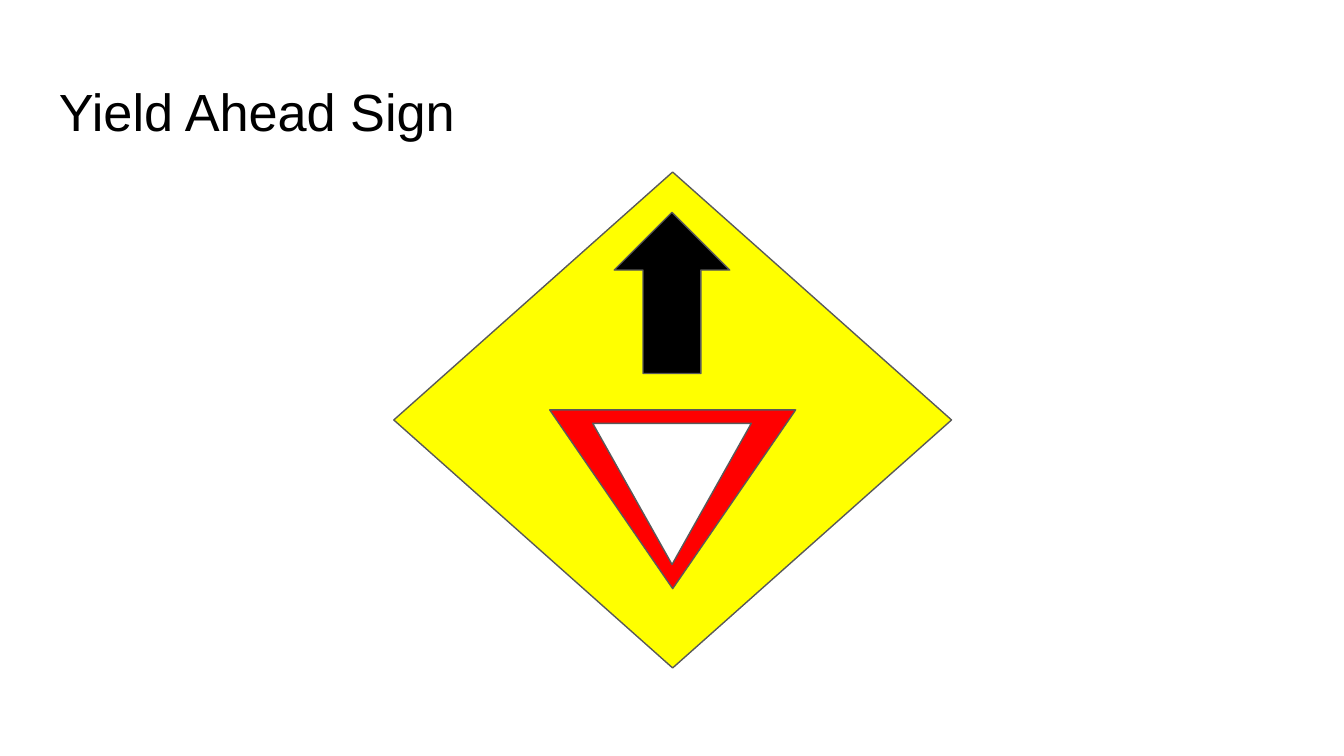
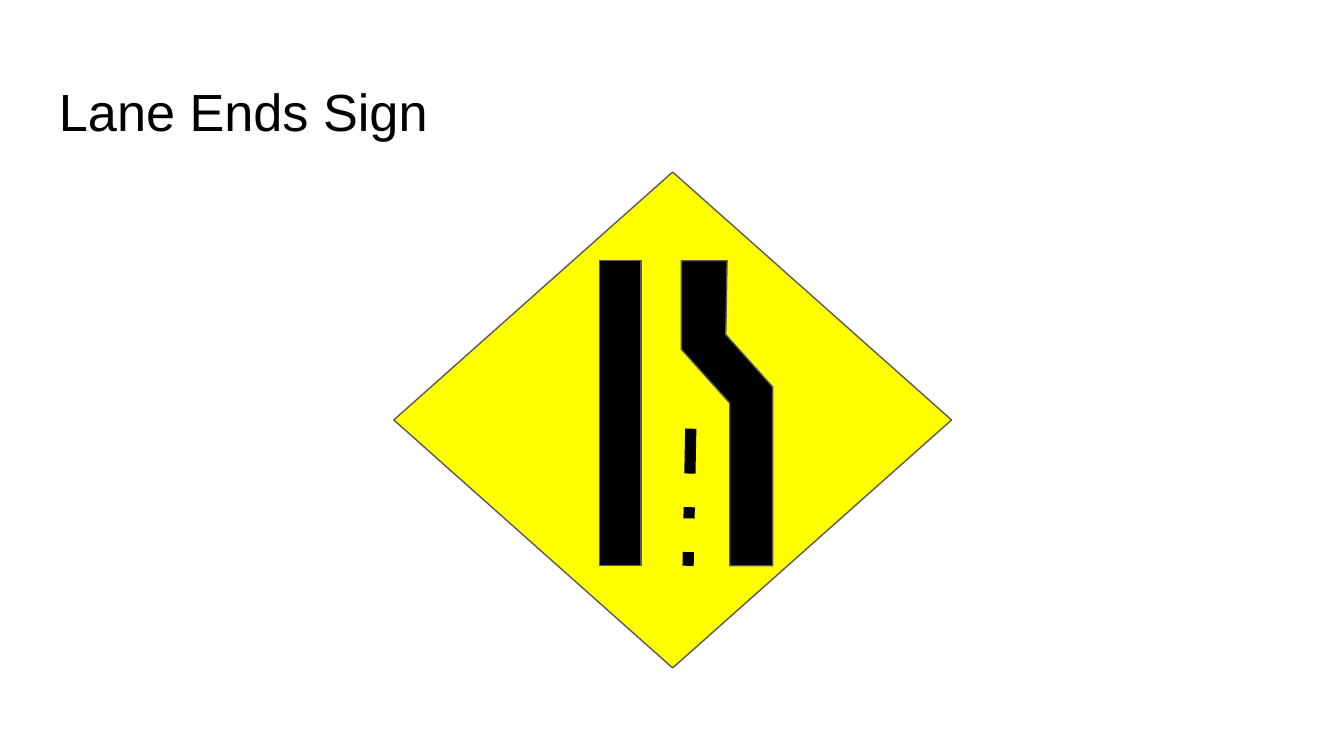
import pptx
import pptx.util
import pptx.dml.color
import pptx.enum.dml
import pptx.enum.shapes
from lxml import etree

Inches = pptx.util.Inches
Pt = pptx.util.Pt
SHAPES = pptx.enum.shapes.MSO_SHAPE

# Shared style
FONT = "Arial"
BLACK = "000000"
WHITE = "FFFFFF"
RED = "FF0000"
YELLOW = "FFFF00"
OUTLINE = "595959"


def color(hex_value):
    return pptx.dml.color.RGBColor.from_string(hex_value)


def style_shape(shape, fill):
    shape.shadow.inherit = False
    shape.fill.solid()
    shape.fill.fore_color.rgb = color(fill)
    shape.line.color.rgb = color(OUTLINE)
    shape.line.width = Pt(0.75)


def add_preset(slide, preset, left, top, width, height, fill, rotation=0):
    shape = slide.shapes.add_shape(
        preset, Inches(left), Inches(top), Inches(width), Inches(height))
    shape.rotation = rotation
    style_shape(shape, fill)


def add_outline(slide, points, fill):
    corners = [(Inches(x), Inches(y)) for x, y in points]
    builder = slide.shapes.build_freeform(*corners[0], scale=1.0)
    builder.add_line_segments(corners[1:], close=True)
    style_shape(builder.convert_to_shape(), fill)


def add_lane_marking(slide, start, end):
    connector = slide.shapes.add_connector(
        pptx.enum.shapes.MSO_CONNECTOR.STRAIGHT,
        *(Inches(value) for value in start + end))
    connector.line.color.rgb = color(BLACK)
    connector.line.width = Pt(6)
    connector.line.dash_style = pptx.enum.dml.MSO_LINE.DASH_DOT
    # No shadow
    properties = connector.element.spPr
    etree.SubElement(properties, pptx.oxml.ns.qn("a:effectLst"))


def add_title(slide, text):
    box = slide.shapes.add_textbox(
        Inches(0.34), Inches(0.49), Inches(9.32), Inches(0.63))
    frame = box.text_frame
    frame.word_wrap = True
    frame.margin_left = frame.margin_right = Inches(0.1)
    frame.margin_top = frame.margin_bottom = Inches(0.1)
    paragraph = frame.paragraphs[0]
    paragraph.text = text
    paragraph.font.name = FONT
    paragraph.font.size = Pt(28)
    paragraph.font.color.rgb = color(BLACK)


def add_sign_slide(presentation, title):
    """Add a slide with its title and the yellow warning diamond."""
    slide = presentation.slides.add_slide(presentation.slide_layouts[6])
    slide.background.fill.solid()
    slide.background.fill.fore_color.rgb = color(WHITE)
    add_title(slide, title)
    add_preset(slide, SHAPES.DIAMOND, 2.93, 1.28, 4.15, 3.69, YELLOW)
    return slide


def main():
    # Widescreen, 16:9
    presentation = pptx.Presentation()
    presentation.slide_width = Inches(10)
    presentation.slide_height = Inches(10 * 9 / 16)

    # Yield ahead: arrow above a yield triangle
    slide = add_sign_slide(presentation, "Yield Ahead Sign")
    add_preset(slide, SHAPES.UP_ARROW, 4.57, 1.58, 0.86, 1.2, BLACK)
    add_preset(slide, SHAPES.ISOSCELES_TRIANGLE, 4.09, 3.05, 1.83, 1.33, RED, 180)
    add_preset(slide, SHAPES.ISOSCELES_TRIANGLE, 4.41, 3.15, 1.18, 1.05, WHITE, 180)

    # Lane ends: straight edge, lane marking and narrowing edge
    slide = add_sign_slide(presentation, "Lane Ends Sign")
    road_top, road_bottom = 1.94, 4.21
    add_preset(slide, SHAPES.RECTANGLE, 4.46, road_top,
               0.31, road_bottom - road_top, BLACK)
    add_lane_marking(slide, (5.14, 3.19), (5.12, road_bottom))
    add_outline(slide, [
        (5.41, road_top), (5.07, road_top), (5.07, 2.6), (5.43, 3),
        (5.43, road_bottom), (5.75, road_bottom), (5.75, 2.88), (5.4, 2.49),
    ], BLACK)

    presentation.save("out.pptx")


if __name__ == "__main__":
    main()
